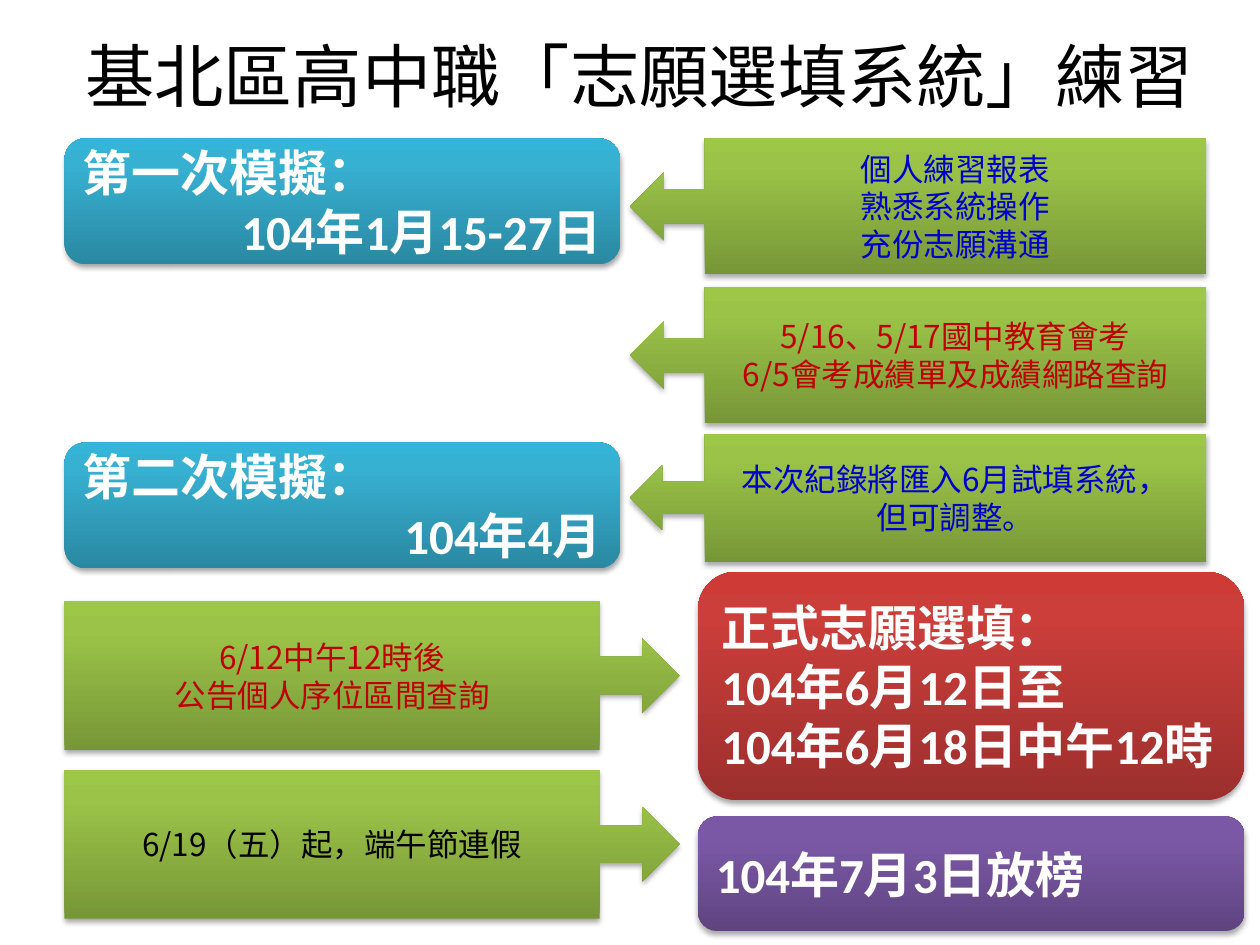
from copy import deepcopy

from lxml.etree import SubElement
from pptx import Presentation
from pptx.dml.color import RGBColor
from pptx.enum.shapes import MSO_SHAPE
from pptx.enum.text import MSO_ANCHOR, PP_ALIGN
from pptx.oxml.ns import qn
from pptx.util import Cm, Pt

LEFT, CENTER, RIGHT = PP_ALIGN.LEFT, PP_ALIGN.CENTER, PP_ALIGN.RIGHT
CJK_FONT = "Noto Sans CJK SC"
BLUE, RED, BLACK, WHITE = "0000CC", "C00000", "000000", "FFFFFF"

# Gradient colours from bottom to top
TEAL_FILL = ("2A88A2", "37B1D2", "34B4D6")
RED_FILL = ("9C2F2D", "CB3E3A", "CE3B37")
GREEN_FILL = ("779737", "9BC348", "9DC746")
PURPLE_FILL = ("5F4480", "7B58A6", "7C57A8")


def rgb(value):
    return RGBColor.from_string(value)


class SchedulePage:
    """Holds the slide and the style of its boxes."""

    def __init__(self, page):
        self.page = page

    def style(self, para, size, color, font=CJK_FONT, bold=False, align=CENTER):
        para.alignment = align
        para.font.size = Pt(size)
        para.font.bold = bold
        para.font.color.rgb = rgb(color)
        para.font.name = font
        SubElement(para.font._element, qn("a:ea"), typeface=CJK_FONT)

    def title(self, text, left, top, width, height):
        box = self.page.shapes.title
        box.left, box.top, box.width, box.height = map(Cm, (left, top, width, height))
        box.text_frame.text = text
        box.text_frame.vertical_anchor = MSO_ANCHOR.MIDDLE
        self.style(box.text_frame.paragraphs[0], 39.6, BLACK)

    def gradient(self, box, colors):
        box.fill.gradient()
        box.fill.gradient_angle = 90
        stop_list = box._element.spPr.find(qn("a:gradFill")).find(qn("a:gsLst"))
        stop_list.append(deepcopy(stop_list[-1]))
        for stop, color, position in zip(box.fill.gradient_stops, colors, (0, 0.8, 1)):
            stop.color.rgb = rgb(color)
            stop.position = position

    def soft_shadow(self, box):
        box.shadow.inherit = False
        effects = box._element.spPr.find(qn("a:effectLst"))
        shadow = SubElement(effects, qn("a:outerShdw"), blurRad=str(Pt(3.1)),
                            dist=str(Pt(1.8)), dir="5400000", rotWithShape="0")
        color = SubElement(shadow, qn("a:srgbClr"), val=BLACK)
        SubElement(color, qn("a:alpha"), val="35000")

    def box(self, kind, place, colors, lines):
        box = self.page.shapes.add_shape(kind, *map(Cm, place))
        self.gradient(box, colors)
        box.line.fill.background()
        self.soft_shadow(box)
        frame = box.text_frame
        frame.word_wrap = True
        frame.vertical_anchor = MSO_ANCHOR.MIDDLE
        frame.text = "\n".join(lines)
        return box

    def milestone(self, place, colors, lines, last_align=LEFT):
        box = self.box(MSO_SHAPE.ROUNDED_RECTANGLE, place, colors, lines)
        paras = box.text_frame.paragraphs
        for para in paras:
            align = last_align if para is paras[-1] else LEFT
            self.style(para, 28, WHITE, "Calibri", True, align)

    def callout(self, kind, place, color, lines):
        box = self.box(kind, place, GREEN_FILL, lines)
        box.adjustments[3] = 0.87
        for para in box.text_frame.paragraphs:
            self.style(para, 18, color)


def main():
    deck = Presentation()
    deck.slide_width, deck.slide_height = Cm(25.4), Cm(19.05)
    schedule = SchedulePage(deck.slides.add_slide(deck.slide_layouts[5]))
    schedule.title("基北區高中職「志願選填系統」練習", 1.27, -0.08, 23.24, 3.18)

    for top, lines in (
        (2.79, ("第一次模擬：", "104年1月15-27日")),
        (8.92, ("第二次模擬：", "104年4月")),
    ):
        schedule.milestone((1.3, top, 11.2, 2.54), TEAL_FILL, lines, RIGHT)

    for top, height, colors, lines in (
        (11.53, 4.6, RED_FILL,
         ("正式志願選填：", "104年6月12日至", "104年6月18日中午12時")),
        (16.46, 2.31, PURPLE_FILL, ("104年7月3日放榜",)),
    ):
        schedule.milestone((14.07, top, 11.02, height), colors, lines)

    for top, height, color, lines in (
        (2.79, 2.74, BLUE, ("個人練習報表", "熟悉系統操作", "充份志願溝通")),
        (5.79, 2.74, RED, ("5/16、5/17國中教育會考", "6/5會考成績單及成績網路查詢")),
        (8.74, 2.59, BLUE, ("本次紀錄將匯入6月試填系統，", "但可調整。")),
    ):
        schedule.callout(MSO_SHAPE.LEFT_ARROW_CALLOUT,
                         (12.7, top, 11.61, height), color, lines)

    for top, color, lines in (
        (12.12, RED, ("6/12中午12時後", "公告個人序位區間查詢")),
        (15.52, BLACK, ("6/19（五）起，端午節連假",)),
    ):
        schedule.callout(MSO_SHAPE.RIGHT_ARROW_CALLOUT,
                         (1.3, top, 12.4, 3), color, lines)

    deck.save("out.pptx")


if __name__ == "__main__":
    main()
